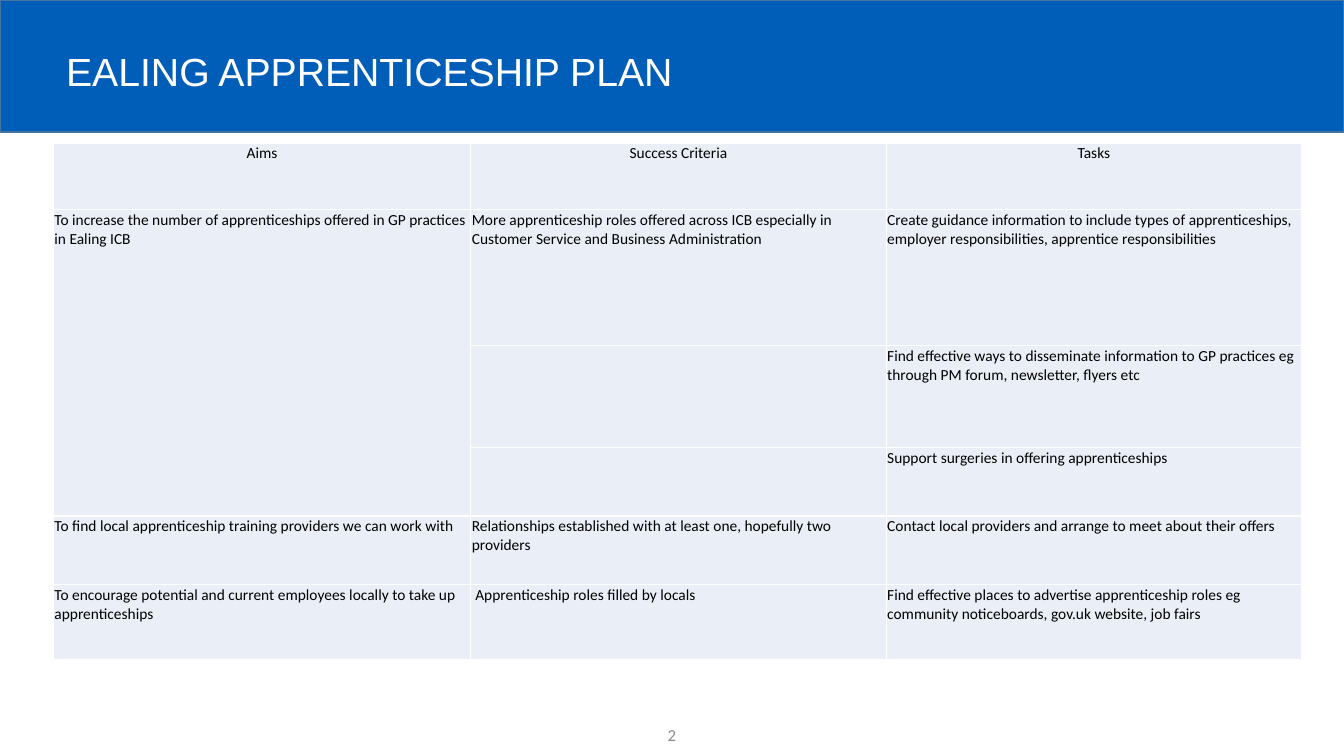
from lxml import etree
from pptx import Presentation, util as u
from pptx.dml.color import RGBColor
from pptx.enum import shapes, text
from pptx.oxml import ns

WIDE, HIGH = 13.33, 7.5
HUES = {"band": "005EB8", "edge": "43739E", "cell": "EAEFF7",
        "white": "FFFFFF", "ink": "000000", "grey": "8C8C8C"}
COLS = [4.14, 4.12, 4.12]
ROWS = [0.66, 1.35, 1.01, 0.68, 0.68, 0.74]
PLAN = [
    ["Aims", "Success Criteria", "Tasks"],
    ["To increase the number of apprenticeships offered in GP practices in Ealing ICB",
     "More apprenticeship roles offered across ICB especially in Customer Service and Business Administration",
     "Create guidance information to include types of apprenticeships, employer responsibilities, apprentice responsibilities"],
    ["", "", "Find effective ways to disseminate information to GP practices eg through PM forum, newsletter, flyers etc"],
    ["", "", "Support surgeries in offering apprenticeships"],
    ["To find local apprenticeship training providers we can work with",
     "Relationships established with at least one, hopefully two providers",
     "Contact local providers and arrange to meet about their offers"],
    ["To encourage potential and current employees locally to take up apprenticeships",
     " Apprenticeship roles filled by locals",
     "Find effective places to advertise apprenticeship roles eg community noticeboards, gov.uk website, job fairs"],
]


def hue(name):
    return RGBColor.from_string(HUES[name])


def inches(box):
    return [u.Inches(n) for n in box]


def write(frame, words, size, face, tint, align=text.PP_ALIGN.LEFT):
    para = frame.paragraphs[0]
    para.alignment = align
    run = para.add_run()
    run.text = words
    run.font.size = u.Pt(size)
    run.font.name = face
    run.font.color.rgb = hue(tint)
    return para


def label(slide, box, *style):
    frame = slide.shapes.add_textbox(*inches(box)).text_frame
    frame.word_wrap = True
    frame.vertical_anchor = text.MSO_ANCHOR.MIDDLE
    return write(frame, *style)


def header(slide, box):
    left, top, width, height = box
    band = slide.shapes.add_shape(shapes.MSO_SHAPE.RECTANGLE, *inches(box))
    band.shadow.inherit = False
    band.fill.solid()
    band.fill.fore_color.rgb = hue("band")
    band.line.color.rgb = hue("edge")
    band.line.width = u.Pt(1)
    title = label(slide, (left + 0.45, top + height / 3, width - 0.89, height * 0.45),
                  " EALING APPRENTICESHIP PLAN", 28, "Arial", "white")
    title.line_spacing = 0.9


def border(cell):
    props = cell._tc.get_or_add_tcPr()
    for side in ("lnL", "lnR", "lnT", "lnB"):
        line = etree.SubElement(props, ns.qn("a:" + side), w=str(u.Pt(1)))
        fill = etree.SubElement(line, ns.qn("a:solidFill"))
        etree.SubElement(fill, ns.qn("a:srgbClr"), val=HUES["white"])


def grid(slide, box):
    table = slide.shapes.add_table(len(ROWS), len(COLS), *inches(box)).table
    for col, width in zip(table.columns, COLS):
        col.width = u.Inches(width)
    for row, height in zip(table.rows, ROWS):
        row.height = u.Inches(height)
    for r, line in enumerate(PLAN):
        for c, words in enumerate(line):
            cell = table.cell(r, c)
            border(cell)
            cell.fill.solid()
            cell.fill.fore_color.rgb = hue("cell")
            cell.margin_left = cell.margin_right = cell.margin_top = u.Inches(0.01)
            cell.margin_bottom = 0
            if words:
                align = text.PP_ALIGN.LEFT if r else text.PP_ALIGN.CENTER
                write(cell.text_frame, words, 11, "Calibri", "ink", align)
    table.cell(1, 0).merge(table.cell(3, 0))


def footer(slide, box):
    label(slide, box, "2", 12, "Calibri", "grey", text.PP_ALIGN.CENTER)


def main():
    deck = Presentation()
    deck.slide_width, deck.slide_height = inches((WIDE, HIGH))
    slide = deck.slides.add_slide(deck.slide_layouts[6])
    header(slide, (0, 0, WIDE, 1.31))
    footer(slide, ((WIDE - 3) / 2, 7.09, 3, 0.4))
    grid(slide, (0.53, 1.42, sum(COLS), sum(ROWS)))
    deck.save("out.pptx")


if __name__ == "__main__":
    main()
